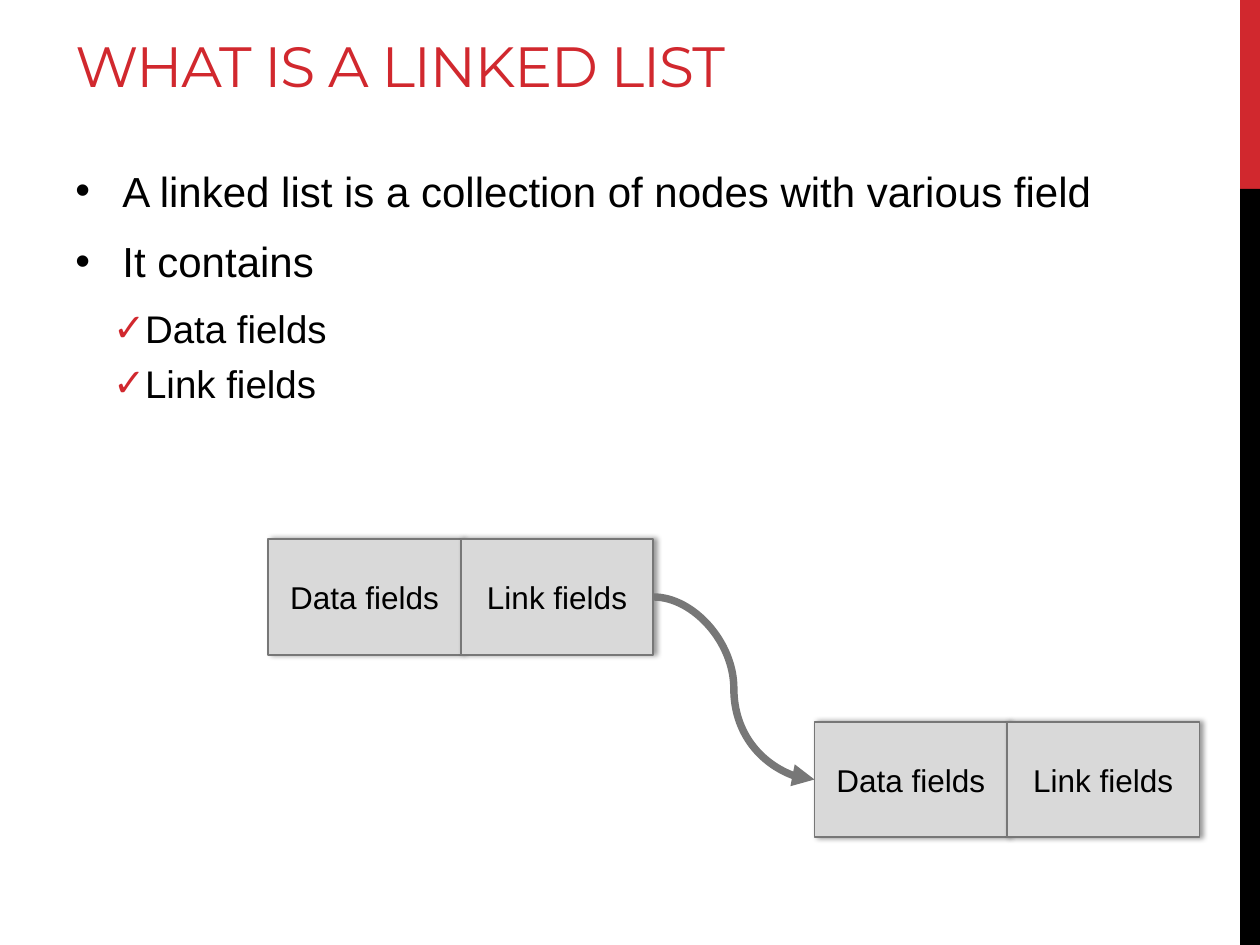
from lxml import etree
from pptx import Presentation
from pptx.dml.color import RGBColor
from pptx.enum.shapes import MSO_CONNECTOR, MSO_SHAPE
from pptx.enum.text import MSO_ANCHOR, PP_ALIGN
from pptx.oxml import parse_xml
from pptx.oxml.ns import nsdecls, qn
from pptx.util import Cm, Pt

RED = RGBColor(0xD1, 0x28, 0x2E)
BLACK = RGBColor(0, 0, 0)
LIGHT = RGBColor(0xD9, 0xD9, 0xD9)
GRAY = RGBColor(0x77, 0x77, 0x77)

# Content
TITLE = "WHAT IS A LINKED LIST"
POINTS = [
    (0, "A linked list is a collection of nodes with various field"),
    (0, "It contains"),
    (1, "Data fields"),
    (1, "Link fields"),
]
# level: bullet, bullet colour, indent, hanging, size, space before, space after
LEVELS = [
    ("•", BLACK, 0.95, 0.95, 24, 5.5, 6),
    ("✓", RED, 1.27, 0.51, 22, 5, 0),
]
FIELDS = ["Data fields", "Link fields"]
NODES = [(5.41, 10.87), (16.42, 14.55)]
CELL_W, CELL_H = 3.88, 2.33
BARS = [(0, 3.81, RED), (3.81, 15.24, BLACK)]


def set_font(para, name, size, color):
    para.font.name = name
    para.font.size = Pt(size)
    para.font.color.rgb = color


def add_text_frame(left, top, width, height):
    box = page.shapes.add_textbox(Cm(left), Cm(top), Cm(width), Cm(height))
    box.text_frame.word_wrap = True
    return box.text_frame


def add_bullet(para, char, color, indent, hanging):
    props = para._p.get_or_add_pPr()
    props.set("marL", str(Cm(indent)))
    props.set("indent", str(-Cm(hanging)))
    for xml in (
        f'<a:buClr {nsdecls("a")}><a:srgbClr val="{color}"/></a:buClr>',
        f'<a:buFont {nsdecls("a")} typeface="Arial"/>',
        f'<a:buChar {nsdecls("a")} char="{char}"/>',
    ):
        props.append(parse_xml(xml))


def add_shadow(shape):
    shape.shadow.inherit = False
    effects = shape._element.spPr.find(qn("a:effectLst"))
    effects.append(parse_xml(
        f'<a:outerShdw {nsdecls("a")} blurRad="{Pt(3.1)}" dist="{Pt(1.8)}" dir="0">'
        '<a:srgbClr val="000000"><a:alpha val="40000"/></a:srgbClr></a:outerShdw>'))


def add_node(left, top):
    group = page.shapes.add_group_shape()
    cells = []
    for i, label in enumerate(FIELDS):
        cell = group.shapes.add_shape(
            MSO_SHAPE.RECTANGLE, Cm(left + i * CELL_W), Cm(top), Cm(CELL_W), Cm(CELL_H))
        cell.fill.solid()
        cell.fill.fore_color.rgb = LIGHT
        cell.line.color.rgb = GRAY
        cell.line.width = Pt(1)
        add_shadow(cell)
        frame = cell.text_frame
        frame.vertical_anchor = MSO_ANCHOR.MIDDLE
        para = frame.paragraphs[0]
        para.text = label
        para.alignment = PP_ALIGN.CENTER
        set_font(para, "Arial", 18, BLACK)
        cells.append(cell)
    return cells


deck = Presentation()
deck.slide_width, deck.slide_height = Cm(25.4), Cm(19.05)
page = deck.slides.add_slide(deck.slide_layouts[6])

# Side bars
for top, height, color in BARS:
    bar = page.shapes.add_shape(MSO_SHAPE.RECTANGLE, Cm(25), Cm(top), Cm(0.4), Cm(height))
    bar.shadow.inherit = False
    bar.fill.solid()
    bar.fill.fore_color.rgb = color
    bar.line.fill.background()

# Title
frame = add_text_frame(1.27, 0.43, 22.91, 1.68)
frame.vertical_anchor = MSO_ANCHOR.BOTTOM
para = frame.paragraphs[0]
para.text = TITLE
set_font(para, "Montserrat", 32.4, RED)
para.font._element.set("spc", "-60")

# Bulleted text
frame = add_text_frame(1.27, 3.1, 22.91, 14.71)
frame.margin_top = Cm(0.23)
for i, (level, text) in enumerate(POINTS):
    char, color, indent, hanging, size, before, after = LEVELS[level]
    para = frame.add_paragraph() if i else frame.paragraphs[0]
    para.text = text
    para.level = level
    add_bullet(para, char, color, indent, hanging)
    if i:
        para.space_before = Pt(before)
    para.space_after = Pt(after)
    set_font(para, "Arial", size, BLACK)

# Two nodes, the first linked to the second
first, second = [add_node(left, top) for left, top in NODES]
link = page.shapes.add_connector(MSO_CONNECTOR.CURVE, 0, 0, 0, 0)
link.begin_connect(first[-1], 3)
link.end_connect(second[0], 1)
link.line.color.rgb = GRAY
link.line.width = Pt(4.25)
etree.SubElement(link.line._get_or_add_ln(), qn("a:tailEnd"), type="triangle")
etree.SubElement(link._element.spPr, qn("a:effectLst"))

deck.save("out.pptx")
